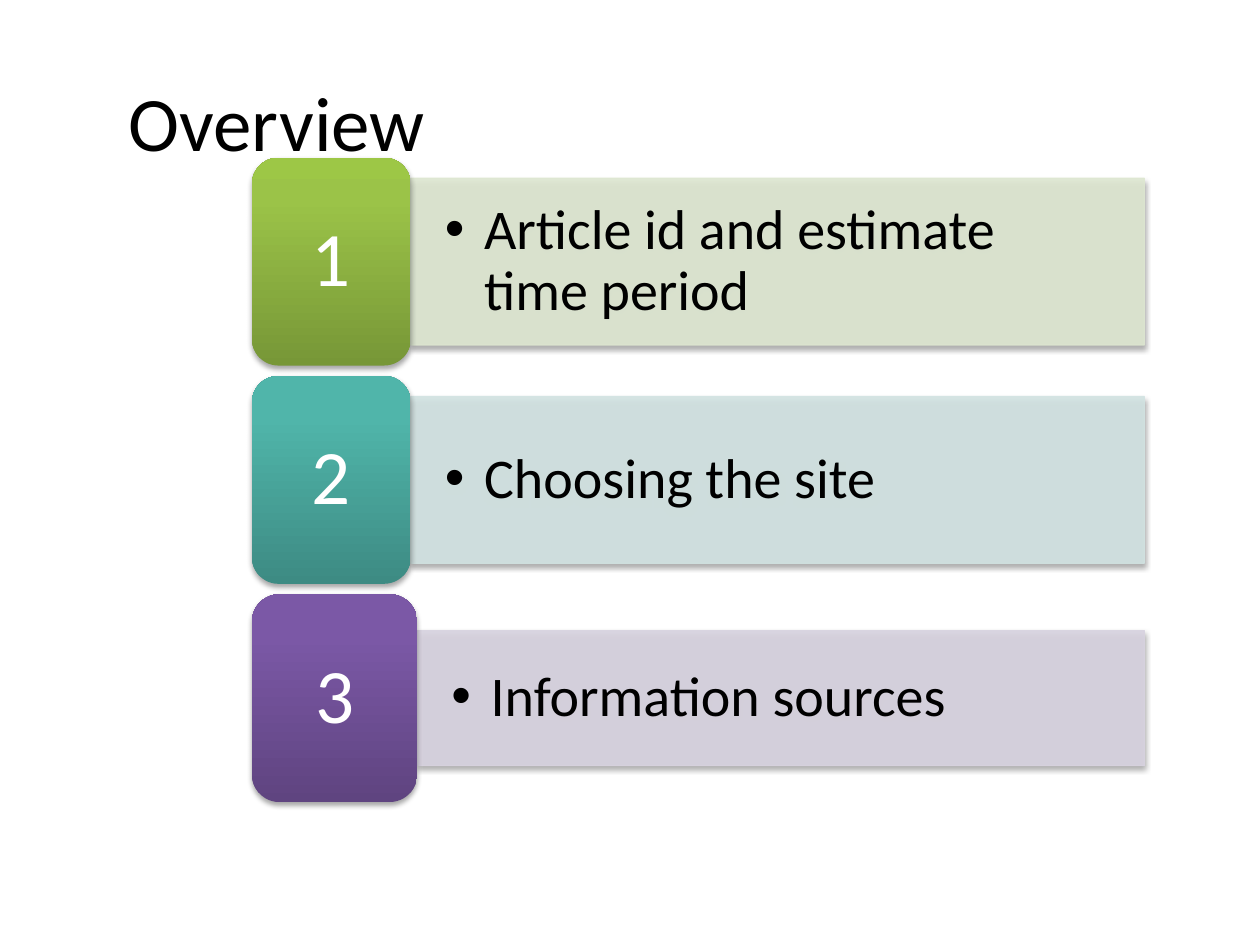
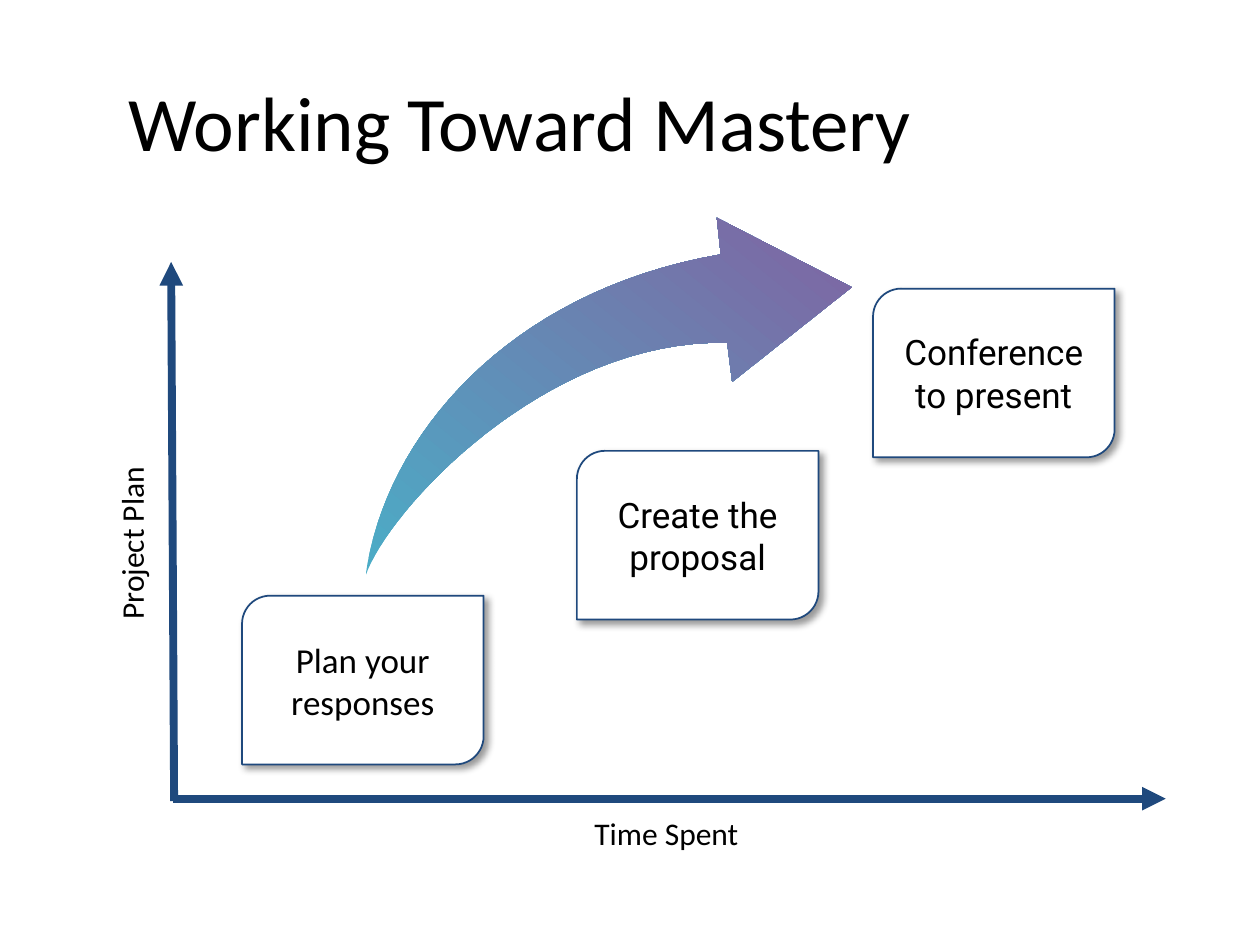
import dataclasses
import typing

import lxml.etree
import pptx
import pptx.dml.color
import pptx.enum.shapes
import pptx.enum.text
import pptx.oxml.ns
import pptx.util

Cm = pptx.util.Cm
Pt = pptx.util.Pt
RGB = pptx.dml.color.RGBColor
Kind = pptx.enum.shapes.MSO_SHAPE
Align = pptx.enum.text.PP_ALIGN
Anchor = pptx.enum.text.MSO_ANCHOR
qn = pptx.oxml.ns.qn

BLACK = RGB(0x00, 0x00, 0x00)
WHITE = RGB(0xFF, 0xFF, 0xFF)
NAVY = RGB(0x1F, 0x49, 0x7D)
AQUA = RGB(0x4B, 0xAC, 0xC6)
PLUM = RGB(0x80, 0x64, 0xA2)
MOSS = (RGB(0x77, 0x97, 0x37), RGB(0x9B, 0xC3, 0x48), RGB(0x9D, 0xC7, 0x46))
TEAL = (RGB(0x3D, 0x8B, 0x83), RGB(0x50, 0xB5, 0xAA), RGB(0x4E, 0xB8, 0xAC))
GRAPE = (RGB(0x5F, 0x44, 0x80), RGB(0x7B, 0x58, 0xA6), RGB(0x7C, 0x57, 0xA8))
PALE_MOSS = RGB(0xDE, 0xE7, 0xD1)
PALE_TEAL = RGB(0xD2, 0xE3, 0xE2)
PALE_GRAPE = RGB(0xD8, 0xD3, 0xE0)
FONT = "Calibri"
Point = tuple[float, float]


@dataclasses.dataclass(frozen=True)
class Box:
    left: float
    top: float
    width: float
    height: float

    def sides(self) -> tuple:
        return tuple(map(Cm, (self.left, self.top, self.width, self.height)))


@dataclasses.dataclass(frozen=True)
class Shade:
    alpha: int
    blur: float
    shift: float
    angle: int


@dataclasses.dataclass(frozen=True)
class Topic:
    text: str
    tones: tuple
    pale: RGB
    width: float = 3.2
    height: float = 3.36


@dataclasses.dataclass(frozen=True)
class Step:
    lines: tuple
    left: float
    top: float
    font: str = "Roboto"


SOFT = Shade(35, 3.1, 1.8, 90)
DEEP = Shade(40, 4, 3, 45)

TOPICS = (
    Topic("Article id and estimate time period", MOSS, PALE_MOSS),
    Topic("Choosing the site", TEAL, PALE_TEAL),
    Topic("Information sources", GRAPE, PALE_GRAPE, 3.33, 2.72),
)
STEPS = (
    Step(("Plan your", "responses"), 4.88, 12.01, FONT),
    Step(("Create the", "proposal"), 11.63, 9.09),
    Step(("Conference to present",), 17.6, 5.82),
)


def node(parent: typing.Any, tag: str, **traits: typing.Any) -> typing.Any:
    return lxml.etree.SubElement(
        parent, qn(tag), {key: str(value) for key, value in traits.items()})


def add_shade(shape: typing.Any, shade: Shade) -> None:
    effect = shape._element.spPr.find(qn("a:effectLst"))
    outer = node(effect, "a:outerShdw", blurRad=Pt(shade.blur), dist=Pt(shade.shift),
                 dir=shade.angle * 60000, algn="ctr", rotWithShape=0)
    color = node(outer, "a:srgbClr", val=BLACK)
    node(color, "a:alpha", val=shade.alpha * 1000)


def blend(shape: typing.Any, stops: tuple, angle: int) -> None:
    shape.fill.gradient()
    shape.fill.gradient_angle = angle
    ramp = shape._element.spPr.find(".//" + qn("a:gsLst"))
    for old in list(ramp):
        ramp.remove(old)
    for place, tone in stops:
        node(node(ramp, "a:gs", pos=place * 1000), "a:srgbClr", val=tone)


def add_form(slide: typing.Any, kind: typing.Any, box: Box) -> typing.Any:
    shape = slide.shapes.add_shape(kind, *box.sides())
    shape.shadow.inherit = False
    shape.line.fill.background()
    return shape


def set_frame(shape: typing.Any, side: float, edge: float, anchor: typing.Any) -> typing.Any:
    frame = shape.text_frame
    frame.word_wrap = True
    frame.auto_size = pptx.enum.text.MSO_AUTO_SIZE.NONE
    frame.vertical_anchor = anchor
    frame.margin_left = frame.margin_right = Cm(side)
    frame.margin_top = frame.margin_bottom = Cm(edge)
    return frame


def add_run(para: typing.Any, text: str, size: int, color: RGB = BLACK,
            align: typing.Any = Align.CENTER, font: str = FONT) -> None:
    para.alignment = align
    run = para.add_run()
    run.text = text
    run.font.size = Pt(size)
    run.font.name = font
    run.font.color.rgb = color


def start_slide(deck: typing.Any, title: str) -> typing.Any:
    slide = deck.slides.add_slide(deck.slide_layouts[5])
    head = slide.shapes.title
    head.left, head.top, head.width, head.height = Box(2.34, 0.84, 22.43, 3.18).sides()
    frame = set_frame(head, 0.25, 0.13, Anchor.MIDDLE)
    add_run(frame.paragraphs[0], title, 44, align=Align.LEFT)
    return slide


def add_topic(slide: typing.Any, rank: int, topic: Topic) -> None:
    tile = Box(5.08, 3.18 + 4.4 * rank, topic.width, 4.19)
    left = tile.left + tile.width
    top = tile.top + (tile.height - topic.height) / 2
    bar = add_form(slide, Kind.RECTANGLE, Box(left, top, 23.07 - left, topic.height))
    bar.fill.solid()
    bar.fill.fore_color.rgb = topic.pale
    bar.line.color.rgb = topic.pale
    bar.line.width = Pt(0.75)
    for color in bar._element.spPr.iter(qn("a:srgbClr")):
        node(color, "a:alpha", val=90000)
    add_shade(bar, SOFT)
    para = set_frame(bar, 0.69, 0.36, Anchor.MIDDLE).paragraphs[0]
    props = para._p.get_or_add_pPr()
    props.set("marL", str(Cm(0.79)))
    props.set("indent", str(-Cm(0.79)))
    node(props, "a:buFont", typeface="Arial")
    node(props, "a:buChar", char="•")
    para.line_spacing = 0.9
    add_run(para, topic.text, 32, align=Align.LEFT)

    badge = add_form(slide, Kind.ROUNDED_RECTANGLE, tile)
    blend(badge, tuple(zip((0, 80, 100), topic.tones)), 90)
    add_shade(badge, SOFT)
    para = set_frame(badge, 0.6, 0.4, Anchor.MIDDLE).paragraphs[0]
    para.line_spacing = 0.9
    add_run(para, str(rank + 1), 44, WHITE)


def add_axis(slide: typing.Any, start: Point, end: Point) -> None:
    axis = slide.shapes.add_connector(
        pptx.enum.shapes.MSO_CONNECTOR.STRAIGHT, *map(Cm, start + end))
    axis.line.color.rgb = NAVY
    axis.line.width = Pt(4.5)
    node(axis.line._get_or_add_ln(), "a:tailEnd", type="triangle")
    node(axis._element.spPr, "a:effectLst")


def add_label(slide: typing.Any, text: str, box: Box, turn: int = 0) -> None:
    label = slide.shapes.add_textbox(*box.sides())
    label.rotation = turn
    frame = set_frame(label, 0.25, 0.13, Anchor.TOP)
    add_run(frame.paragraphs[0], text, 18)


def add_step(slide: typing.Any, step: Step) -> None:
    card = add_form(slide, Kind.ROUND_2_DIAG_RECTANGLE, Box(step.left, step.top, 4.87, 3.4))
    card.fill.solid()
    card.fill.fore_color.rgb = WHITE
    card.line.color.rgb = NAVY
    card.line.width = Pt(1)
    add_shade(card, DEEP)
    frame = set_frame(card, 0.13, 0.13, Anchor.MIDDLE)
    for rank, line in enumerate(step.lines):
        para = frame.add_paragraph() if rank else frame.paragraphs[0]
        add_run(para, line, 20, font=step.font)


def curve(*knots: Point, count: int = 32) -> list[Point]:
    points = []
    for rank in range(count + 1):
        t = rank / count
        parts = ((1 - t) ** 3, 3 * t * (1 - t) ** 2, 3 * t * t * (1 - t), t ** 3)
        points.append((sum(p * k[0] for p, k in zip(parts, knots)),
                       sum(p * k[1] for p, k in zip(parts, knots))))
    return points


def add_sweep(slide: typing.Any) -> None:
    tail = (7.37, 11.61)
    outer = curve(tail, (7.75, 8.81), (10.24, 5.87), (14.53, 5.13))
    head = [(14.45, 4.39), (17.17, 5.79), (14.76, 7.7)]
    inner = curve((14.66, 6.91), (10.97, 6.83), (7.8, 10.31), tail)
    first, *rest = [(Cm(x), Cm(y)) for x, y in outer + head + inner]
    draft = slide.shapes.build_freeform(*first)
    draft.add_line_segments(rest, close=True)
    sweep = draft.convert_to_shape()
    sweep.shadow.inherit = False
    sweep.line.fill.background()
    blend(sweep, ((0, AQUA), (100, PLUM)), 51)


def main() -> None:
    deck = pptx.Presentation()
    deck.slide_width, deck.slide_height = Cm(25.4), Cm(19.05)

    slide = start_slide(deck, "Overview")
    for rank, topic in enumerate(TOPICS):
        add_topic(slide, rank, topic)

    slide = start_slide(deck, "Working Toward Mastery")
    add_axis(slide, (3.48, 16.1), (23.5, 16.1))
    add_axis(slide, (3.51, 16.15), (3.45, 5.28))
    add_label(slide, "Time Spent", Box(4.01, 16.28, 18.85, 1.02))
    add_label(slide, "Project Plan", Box(-2.51, 10.44, 10.31, 1.02), 270)
    for step in STEPS:
        add_step(slide, step)
    add_sweep(slide)

    deck.save("out.pptx")


if __name__ == "__main__":
    main()
